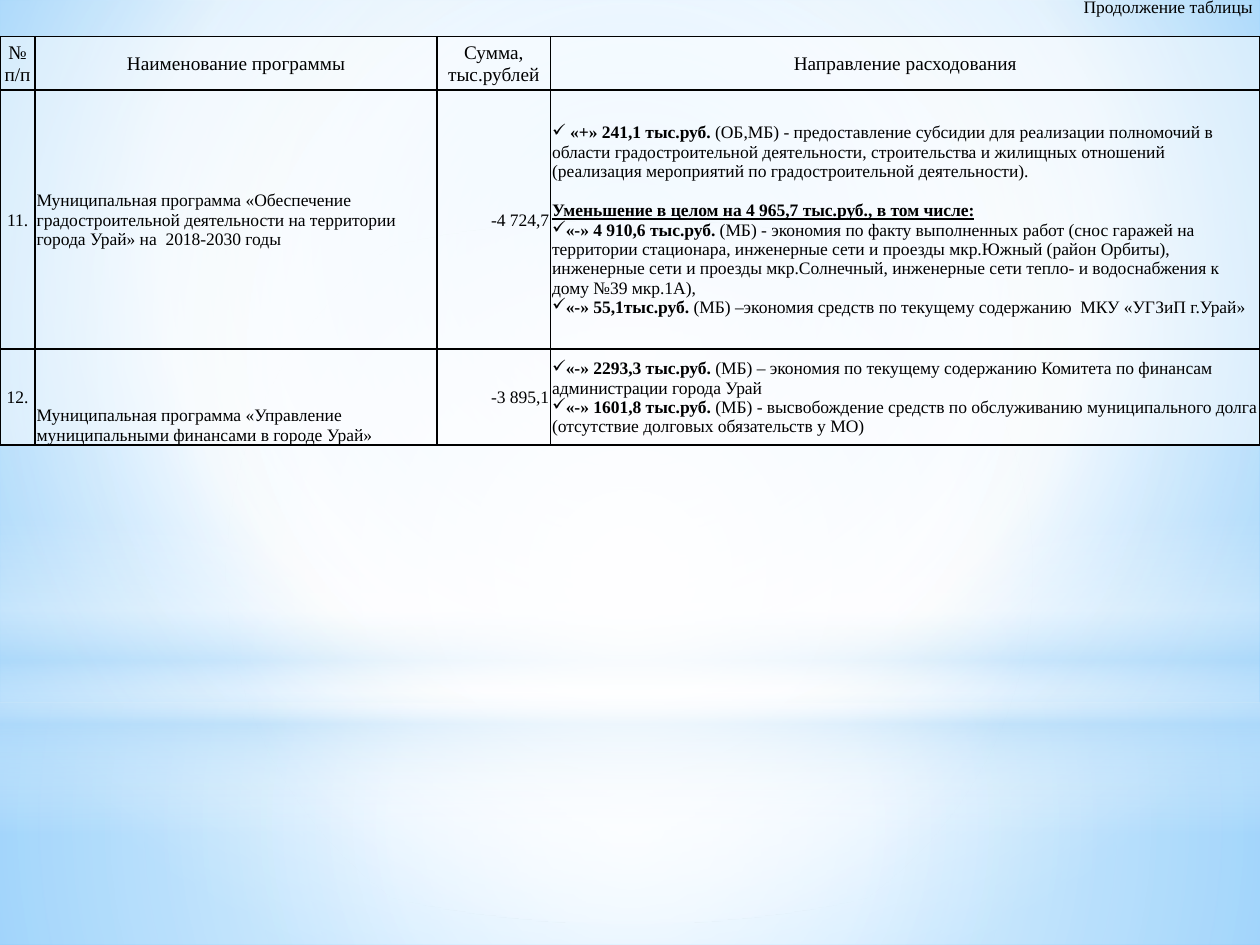
from lxml.etree import SubElement
from pptx import Presentation
from pptx.dml.color import RGBColor
from pptx.enum.shapes import MSO_SHAPE as SHAPE
from pptx.enum.text import MSO_ANCHOR as ANCHOR, PP_ALIGN as ALIGN
from pptx.oxml.ns import qn
from pptx.util import Cm, Pt

BLACK = RGBColor(0x00, 0x00, 0x00)
WHITE = RGBColor(0xFF, 0xFF, 0xFF)
PALE = RGBColor(0xB4, 0xDC, 0xFA)
SKY = RGBColor(0x9E, 0xD5, 0xFF)
BLUE = RGBColor(0x5B, 0xB9, 0xFF)
FONT = "Times New Roman"
CENTER = (50, 50, 50, 50)

# Content: a paragraph is (bullet, gap before in points, [(text, style), ...])
NOTE = "Продолжение таблицы"
HEADERS = ["№ п/п", "Наименование программы", "Сумма, тыс.рублей",
           "Направление расходования"]
PROGRAMS = [
    ("11.",
     "Муниципальная программа «Обеспечение градостроительной деятельности "
     "на территории города Урай» на  2018-2030 годы",
     "-4 724,7",
     [("✓", 0, [(" «+» 241,1 тыс.руб. ", "b"),
                ("(ОБ,МБ) - предоставление субсидии для реализации полномочий в "
                 "области градостроительной деятельности, строительства и жилищных "
                 "отношений (реализация мероприятий по градостроительной "
                 "деятельности).", "")]),
      ("", 11.5, [("Уменьшение в целом на 4 965,7 тыс.руб., в том числе:", "bu")]),
      ("✓", 0, [("«-» 4 910,6 тыс.руб. ", "b"),
                ("(МБ) - экономия по факту выполненных работ (снос гаражей на "
                 "территории стационара, инженерные сети и проезды мкр.Южный (район "
                 "Орбиты), инженерные сети и проезды мкр.Солнечный, инженерные сети "
                 "тепло- и водоснабжения к дому №39 мкр.1А),", "")]),
      ("✓", 0, [("«-» 55,1тыс.руб. ", "b"),
                ("(МБ) –экономия средств по текущему содержанию  "
                 "МКУ «УГЗиП г.Урай»", "")])]),
    ("12.",
     "Муниципальная программа «Управление муниципальными финансами в городе Урай»",
     "-3 895,1",
     [("✓", 0, [("«-» 2293,3 тыс.руб. ", "b"),
                ("(МБ) – экономия по текущему содержанию Комитета по финансам "
                 "администрации города Урай", "")]),
      ("✓", 0, [("«-» 1601,8 тыс.руб. ", "b"),
                ("(МБ) - высвобождение средств по обслуживанию муниципального долга "
                 "(отсутствие долговых обязательств у МО)", "")])]),
]
COL_WIDTHS = [0.71, 8.1, 2.29, 14.3]
ROW_HEIGHTS = [1.07, 5.23, 1.93]
COL_ALIGNS = [ALIGN.CENTER, ALIGN.LEFT, ALIGN.RIGHT, ALIGN.LEFT]

# Backdrop layers: shape, top, height, stops (position, colour, opacity), focus
BACKGROUND = [(0, SKY, 100), (60, WHITE, 100), (100, BLUE, 100)]
LAYERS = [
    (SHAPE.RECTANGLE, 14.17, 4.88,
     [(0, WHITE, 91), (37, WHITE, 76), (100, PALE, 79)], CENTER),
    (SHAPE.RECTANGLE, 0, 14.17,
     [(0, WHITE, 89), (48, WHITE, 62), (100, PALE, 79)], CENTER),
    (SHAPE.RECTANGLE, 10.46, 6.35,
     [(0, WHITE, 0), (29, WHITE, 30), (45, PALE, 40), (55, WHITE, 26),
      (65, PALE, 60), (100, WHITE, 0)], None),
    (SHAPE.OVAL, 4.45, 14.17, [(0, WHITE, 100), (56, WHITE, 0)], CENTER),
]


def set_gradient(parent, stops, focus):
    """Swap the solid fill of parent for a circular or top-down gradient."""
    solid = parent.find(qn("a:solidFill"))
    grad = SubElement(parent, qn("a:gradFill"), rotWithShape="1")
    parent.replace(solid, grad)
    gs_list = SubElement(grad, qn("a:gsLst"))
    for pos, color, opacity in stops:
        gs = SubElement(gs_list, qn("a:gs"), pos=str(pos * 1000))
        clr = SubElement(gs, qn("a:srgbClr"), val=str(color))
        SubElement(clr, qn("a:alpha"), val=str(opacity * 1000))
    if focus:
        circle = SubElement(grad, qn("a:path"), path="circle")
        sides = {side: str(v * 1000) for side, v in zip("ltrb", focus)}
        SubElement(circle, qn("a:fillToRect"), **sides)
    else:
        SubElement(grad, qn("a:lin"), ang="5400000", scaled="0")


def write(tf, content, size=10, align=ALIGN.LEFT):
    """Write a plain string or a list of paragraphs."""
    if isinstance(content, str):
        content = [("", 0, [(content, "")])]
    for i, (bullet, gap, runs) in enumerate(content):
        p = tf.add_paragraph() if i else tf.paragraphs[0]
        p.alignment = align
        if gap:
            p.space_before = Pt(gap)
        if bullet:
            pPr = p._p.get_or_add_pPr()
            pPr.set("marL", "0")
            pPr.set("indent", "0")
            SubElement(pPr, qn("a:buChar"), char=bullet)
        for text, style in runs:
            r = p.add_run()
            r.text = text
            r.font.name, r.font.size = FONT, Pt(size)
            r.font.color.rgb = BLACK
            r.font.bold = "b" in style
            r.font.underline = "u" in style


def style_cell(cell):
    """Half-clear white fill, thin black borders, tight margins."""
    cell.margin_left = cell.margin_right = cell.margin_top = Cm(0.03)
    cell.margin_bottom = 0
    cell.vertical_anchor = ANCHOR.MIDDLE
    cell.fill.solid()
    cell.fill.fore_color.rgb = WHITE
    tcPr = cell._tc.get_or_add_tcPr()
    SubElement(tcPr.find(".//" + qn("a:srgbClr")), qn("a:alpha"), val="47000")
    for i, side in enumerate("LRTB"):
        ln = SubElement(tcPr, qn("a:ln" + side), w=str(Pt(1)))
        tcPr.insert(i, ln)
        fill = SubElement(ln, qn("a:solidFill"))
        SubElement(fill, qn("a:srgbClr"), val=str(BLACK))


def main():
    prs = Presentation()
    prs.slide_width, prs.slide_height = Cm(25.4), Cm(19.05)
    s = prs.slides.add_slide(prs.slide_layouts[6])

    # Background and soft light layers
    s.background.fill.solid()
    bgPr = s._element.find(".//" + qn("p:bgPr"))
    set_gradient(bgPr, BACKGROUND, (20, 10, 20, 60))
    for kind, top, height, stops, focus in LAYERS:
        sp = s.shapes.add_shape(kind, 0, Cm(top), prs.slide_width, Cm(height))
        sp.shadow.inherit = False
        sp.line.fill.background()
        sp.fill.solid()
        set_gradient(sp._element.spPr, stops, focus)

    # Programme table
    rows = [HEADERS] + PROGRAMS
    table = s.shapes.add_table(len(rows), len(HEADERS), 0, Cm(0.74), prs.slide_width,
                               Cm(sum(ROW_HEIGHTS))).table
    table.first_row = table.horz_banding = False
    for col, width in zip(table.columns, COL_WIDTHS):
        col.width = Cm(width)
    for i, (row, height) in enumerate(zip(rows, ROW_HEIGHTS)):
        table.rows[i].height = Cm(height)
        for j, content in enumerate(row):
            cell = table.cell(i, j)
            style_cell(cell)
            write(cell.text_frame, content, size=10 if i else 11,
                  align=COL_ALIGNS[j] if i else ALIGN.CENTER)
    table.cell(2, 1).vertical_anchor = ANCHOR.BOTTOM

    # Continuation note
    tf = s.shapes.add_textbox(Cm(21.49), Cm(-0.2), Cm(4.01), Cm(0.69)).text_frame
    tf.word_wrap = False
    write(tf, NOTE, align=ALIGN.RIGHT)

    prs.save("out.pptx")


if __name__ == "__main__":
    main()
